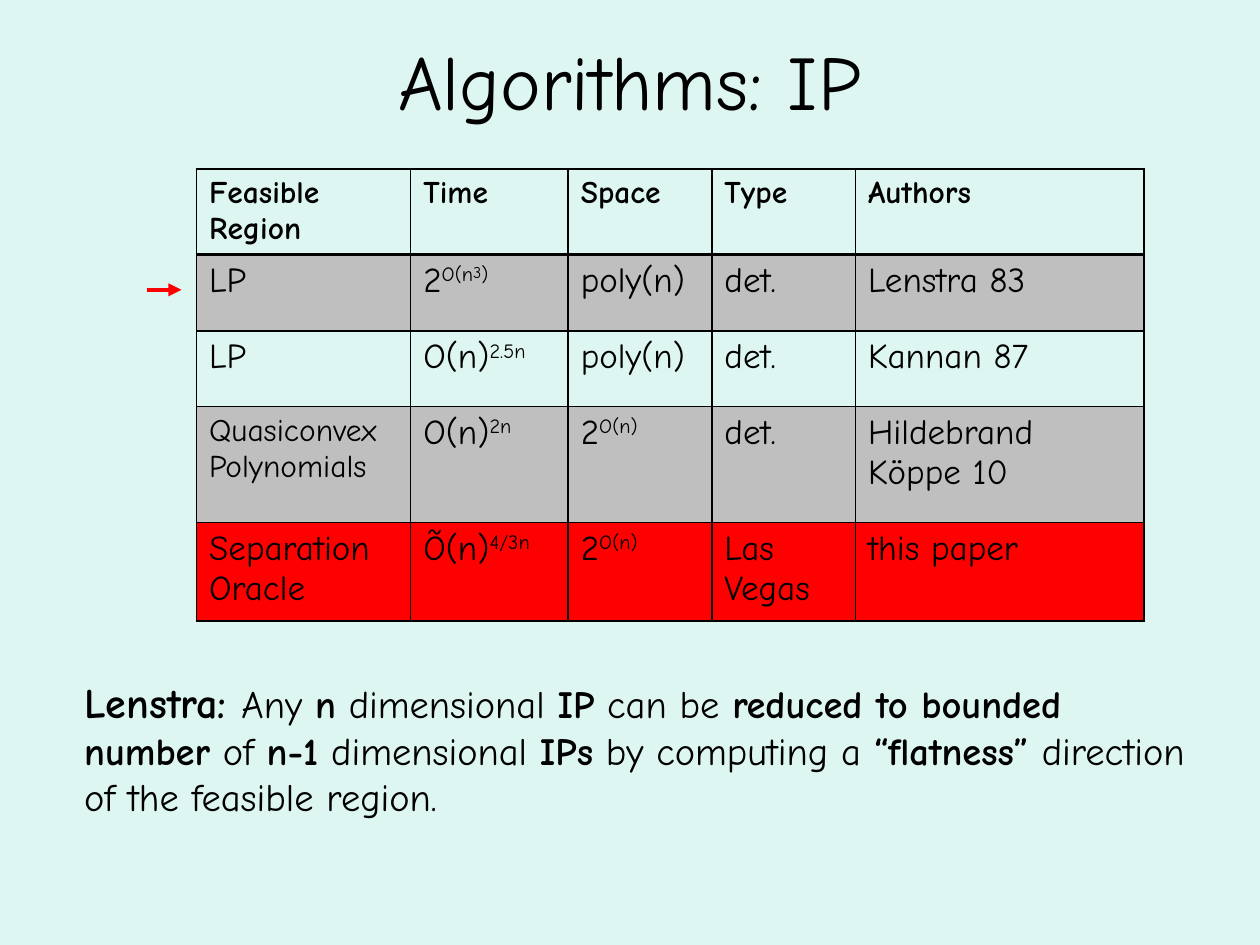
from lxml.etree import SubElement
from pptx import Presentation
from pptx.dml.color import RGBColor
from pptx.enum.shapes import MSO_CONNECTOR as Connector
from pptx.enum.text import MSO_ANCHOR as Anchor, PP_ALIGN as Align
from pptx.oxml.ns import qn
from pptx.util import Inches, Pt

FONT = "Comic Neue"
BLACK, GRAY, RED, MINT = "000000", "BFBFBF", "FF0000", "DEF6F1"


def paint(color_format, hex_color):
    color_format.rgb = RGBColor.from_string(hex_color)


def add_run(paragraph, text, size, bold=False, baseline=0):
    """Append one run; baseline is the superscript height in percent."""
    run = paragraph.add_run()
    run.text = text
    run.font.name, run.font.size, run.font.bold = FONT, Pt(size), bold
    paint(run.font.color, BLACK)
    if baseline:
        run.font._element.set("baseline", str(baseline * 1000))


presentation = Presentation()
presentation.slide_width, presentation.slide_height = Inches(10), Inches(7.5)
slide = presentation.slides.add_slide(presentation.slide_layouts[5])
slide.background.fill.solid()
paint(slide.background.fill.fore_color, MINT)

# Title
title = slide.shapes.title
title.left, title.top = Inches(0.5), Inches(0.01)
title.width, title.height = Inches(9), Inches(1.25)
title.text_frame.vertical_anchor = Anchor.MIDDLE
title_paragraph = title.text_frame.paragraphs[0]
title_paragraph.alignment = Align.CENTER
add_run(title_paragraph, "Algorithms: IP", 44)

# Table of algorithms: a cell is a list of (text, size, bold, baseline) runs
column_widths = [1.7, 1.25, 1.14, 1.14, 2.29]
row_heights = [0.67, 0.61, 0.6, 0.92, 0.78]
row_fills = [None, GRAY, None, GRAY, RED]
headers = ["Feasible Region", "Time", "Space", "Type", "Authors"]
polynomial = [("poly(n)", 20)]
exponential = [("2", 20), ("O(n)", 20, False, 30)]
deterministic = [("det.", 20)]
rows = [
    [[(header, 18, True)] for header in headers],
    [[("LP", 20)],
     [("2", 20), ("O(n", 20, False, 30), ("3", 16, False, 50), (")", 20, False, 30)],
     polynomial, deterministic, [("Lenstra 83", 20)]],
    [[("LP", 20)], [("O(n)", 20), ("2.5n", 20, False, 30)],
     polynomial, deterministic, [("Kannan 87", 20)]],
    [[("Quasiconvex Polynomials", 18)], [("O(n)", 20), ("2n", 20, False, 30)],
     exponential, deterministic, [("Hildebrand Köppe 10", 20)]],
    [[("Separation Oracle", 20)], [("Õ(n)", 20), ("4/3n", 20, False, 30)],
     exponential, [("Las Vegas", 20)], [("this paper", 20)]],
]
table = slide.shapes.add_table(
    len(rows), len(headers), Inches(1.56), Inches(1.34),
    Inches(sum(column_widths)), Inches(sum(row_heights))).table
table.horz_banding = False
table.first_row = False
for column, width in zip(table.columns, column_widths):
    column.width = Inches(width)

for row_index, (row, height, fill) in enumerate(zip(rows, row_heights, row_fills)):
    table.rows[row_index].height = Inches(height)
    for column_index, runs in enumerate(row):
        cell = table.cell(row_index, column_index)
        paragraph = cell.text_frame.paragraphs[0]
        paragraph.alignment = Align.LEFT
        for run in runs:
            add_run(paragraph, *run)
        properties = cell._tc.get_or_add_tcPr()
        for side in "LRTB":
            under_header = (row_index, side) in [(0, "B"), (1, "T")]
            border = SubElement(properties, qn(f"a:ln{side}"),
                                w=str(Pt(2 if under_header else 1)))
            border_fill = SubElement(border, qn("a:solidFill"))
            SubElement(border_fill, qn("a:srgbClr"), val=BLACK)
        if fill:
            cell.fill.solid()
            paint(cell.fill.fore_color, fill)
        else:
            cell.fill.background()

# Statement below the table
statement = slide.shapes.add_textbox(Inches(0.57), Inches(5.32), Inches(8.95), Inches(1.25))
statement.text_frame.word_wrap = True
statement_paragraph = statement.text_frame.paragraphs[0]
add_run(statement_paragraph, "Lenstra: ", 24, True)
phrases = ["Any ", "n", " dimensional ", "IP", " can be ", "reduced to bounded number",
           " of ", "n-1", " dimensional ", "IPs", " by computing a ", "“flatness” ",
           "direction of the feasible region."]
for index, phrase in enumerate(phrases):
    add_run(statement_paragraph, phrase, 22, bold=index % 2 == 1)

# Arrow pointing at the first algorithm
arrow = slide.shapes.add_connector(
    Connector.STRAIGHT, Inches(1.17), Inches(2.3), Inches(1.44), Inches(2.3))
arrow.line.width = Pt(2.5)
paint(arrow.line.color, RED)
SubElement(arrow.line._get_or_add_ln(), qn("a:tailEnd"), type="triangle")
SubElement(arrow._element.spPr, qn("a:effectLst"))

presentation.save("out.pptx")
